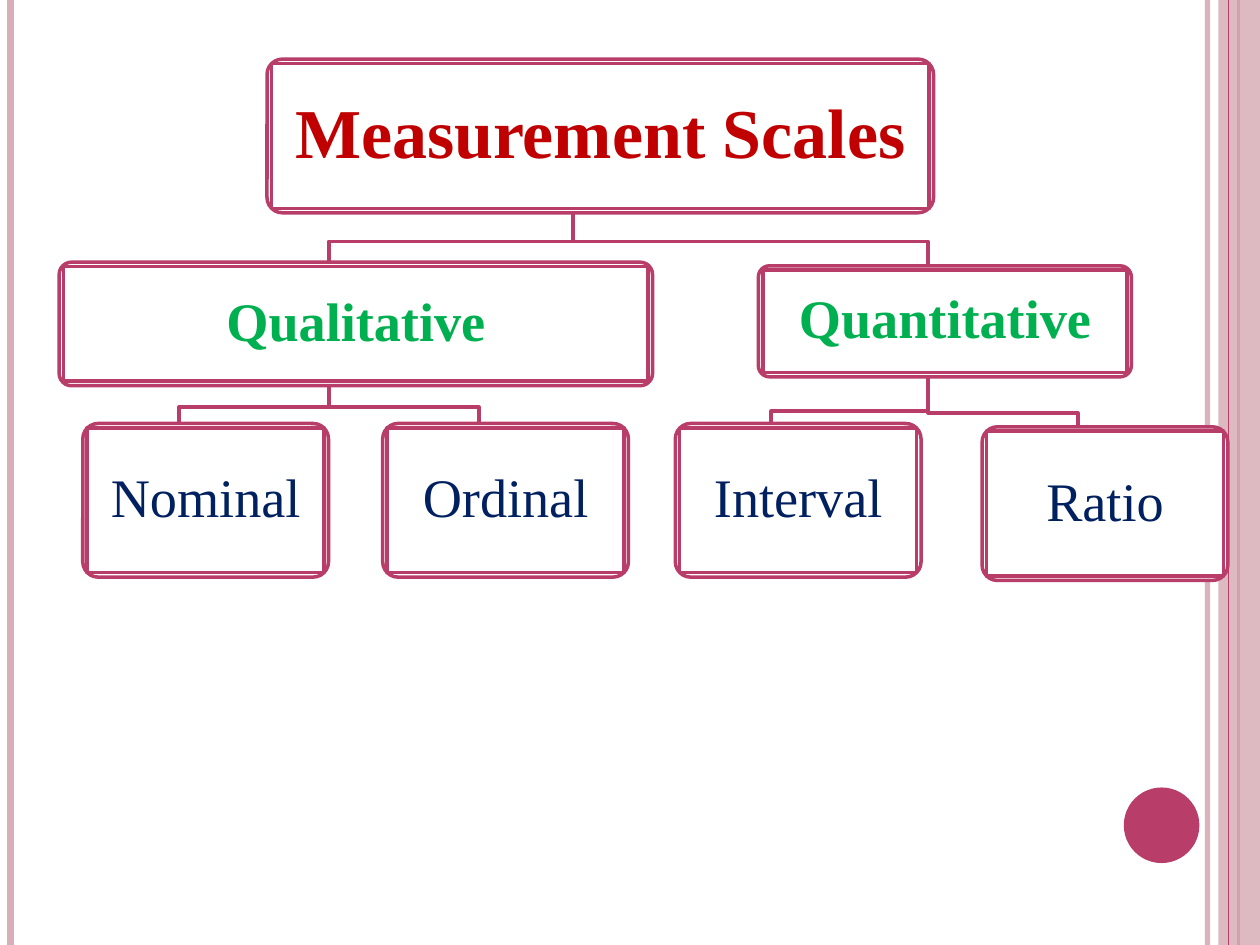
from pptx import Presentation
from pptx.util import Pt
from pptx.dml.color import RGBColor
from pptx.enum.shapes import MSO_CONNECTOR, MSO_SHAPE
from pptx.enum.text import MSO_ANCHOR, PP_ALIGN
from lxml.etree import SubElement
from pptx.oxml.ns import qn

ROSE, PINK, WHITE = "B83D68", "D8AFB9", "FFFFFF"
RED, GREEN, NAVY = "C00000", "00B050", "002060"


def rgb(value):
    return RGBColor.from_string(value)


def style(sp, fill=None, line=None):
    """Set fill and line of a shape without shadow."""
    sp.shadow.inherit = False
    if fill:
        sp.fill.solid()
        sp.fill.fore_color.rgb = rgb(fill)
    else:
        sp.fill.background()
    if line:
        sp.line.color.rgb = rgb(line)
        sp.line.width = Pt(2)
    else:
        sp.line.fill.background()


prs = Presentation()
prs.slide_width, prs.slide_height = Pt(720), Pt(540)
s = prs.slides.add_slide(prs.slide_layouts[6])

# Vertical rules and band at the slide edges: x, colour, line width, opacity
for x, color, width, alpha in [
    (690, PINK, 3, 93),
    (6, PINK, 4.5, 100),
    (707.8, ROSE, 1.5, 100),
    (696.2, PINK, None, 87),
    (702, ROSE, 0.75, 100),
]:
    if width:
        sp = s.shapes.add_connector(MSO_CONNECTOR.STRAIGHT, Pt(x), 0, Pt(x), Pt(540))
        sp.line.color.rgb = rgb(color)
        sp.line.width = Pt(width)
        SubElement(sp._element.spPr, qn("a:effectLst"))
    else:
        sp = s.shapes.add_shape(MSO_SHAPE.RECTANGLE, Pt(x), 0, Pt(720 - x), Pt(540))
        style(sp, fill=color)
    if alpha < 100:
        clr = next(sp._element.spPr.iter(qn("a:srgbClr")))
        SubElement(clr, qn("a:alpha"), val=str(alpha * 1000))

# Page dot
dot = s.shapes.add_shape(MSO_SHAPE.OVAL, Pt(642.2), Pt(450), Pt(43.2), Pt(43.2))
style(dot, fill=ROSE)

# Tree branches, from parent box to child box: start x, start y, bend y, end x, end y
for x1, y1, bend, x2, y2 in [
    (530.4, 215.5, 236, 615.9, 243.9),
    (530.4, 215.5, 235, 440.7, 242),
    (187.9, 220.7, 232.7, 273.6, 242),
    (187.9, 220.7, 232.7, 102.2, 242),
    (327.6, 121.6, 138, 530.4, 151.9),
    (327.6, 121.6, 138, 187.9, 149.8),
]:
    fb = s.shapes.build_freeform(Pt(x1), Pt(y1))
    fb.add_line_segments([(Pt(x1), Pt(bend)), (Pt(x2), Pt(bend)), (Pt(x2), Pt(y2))], close=False)
    style(fb.convert_to_shape(), line=ROSE)

# Tree nodes: a rounded frame with a text panel inside it
inset = 2.5
frame_format = dict(word_wrap=True, vertical_anchor=MSO_ANCHOR.MIDDLE,
                    margin_left=Pt(9.4), margin_right=Pt(9.4),
                    margin_top=Pt(9.4), margin_bottom=Pt(9.4))
top = dict(size=Pt(40), bold=True), RED
group = dict(size=Pt(31), bold=True), GREEN
leaf = dict(size=Pt(31), bold=False), NAVY
for text, x, y, w, h, (font_format, color) in [
    ("Measurement Scales", 152.6, 33.8, 380.9, 87.8, top),
    ("Qualitative", 33.8, 149.8, 339.1, 70.6, group),
    ("Nominal", 47.3, 242, 140.4, 87.8, leaf),
    ("Ordinal", 218.7, 242, 140.4, 87.8, leaf),
    ("Quantitative", 433.4, 151.9, 213.1, 63.4, group),
    ("Interval", 385.9, 242, 140.4, 87.8, leaf),
    ("Ratio", 561.2, 243.9, 140.4, 87.8, leaf),
]:
    frame = s.shapes.add_shape(MSO_SHAPE.ROUNDED_RECTANGLE, Pt(x), Pt(y), Pt(w), Pt(h))
    frame.adjustments[0] = 0.1
    style(frame, WHITE, ROSE)
    sp = s.shapes.add_shape(MSO_SHAPE.RECTANGLE, Pt(x + inset), Pt(y + inset),
                            Pt(w - 2 * inset), Pt(h - 2 * inset))
    style(sp, WHITE, ROSE)
    tf = sp.text_frame
    for name, value in frame_format.items():
        setattr(tf, name, value)
    p = tf.paragraphs[0]
    p.alignment = PP_ALIGN.CENTER
    p.line_spacing = 0.9
    r = p.add_run()
    r.text = text
    r.font.name = "Times New Roman"
    r.font.color.rgb = rgb(color)
    for name, value in font_format.items():
        setattr(r.font, name, value)

prs.save("out.pptx")
